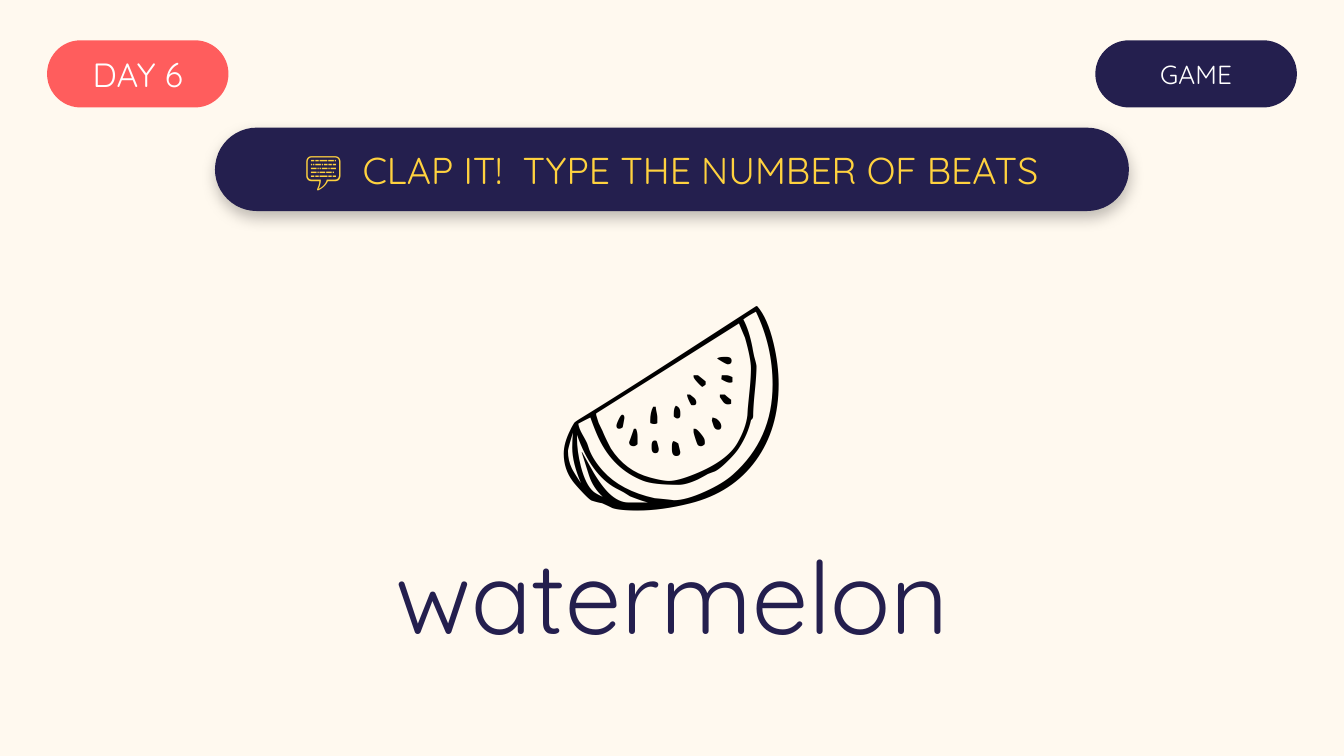
from lxml import etree
from pptx import Presentation
from pptx.dml.color import RGBColor
from pptx.enum.shapes import MSO_SHAPE
from pptx.enum.text import MSO_ANCHOR, MSO_AUTO_SIZE, PP_ALIGN
from pptx.oxml import parse_xml
from pptx.util import Pt

ROUNDED = MSO_SHAPE.ROUNDED_RECTANGLE
TOP, MIDDLE = MSO_ANCHOR.TOP, MSO_ANCHOR.MIDDLE
CENTER = PP_ALIGN.CENTER
NO_AUTOFIT = MSO_AUTO_SIZE.NONE

CREAM = RGBColor(0xFF, 0xF9, 0xEF)
CORAL = RGBColor(0xFF, 0x5D, 0x5D)
NAVY = RGBColor(0x24, 0x1F, 0x4E)
YELLOW = RGBColor(0xFF, 0xD2, 0x3F)
WHITE = RGBColor(0xFF, 0xFF, 0xFF)
BLACK = RGBColor(0x00, 0x00, 0x00)

SHADOW = (
    '<a:effectLst xmlns:a="http://schemas.openxmlformats.org/drawingml/2006/main">'
    '<a:outerShdw blurRad="101600" dist="38100" dir="5400000" rotWithShape="0">'
    '<a:srgbClr val="000000"><a:alpha val="25000"/></a:srgbClr>'
    '</a:outerShdw></a:effectLst>'
)


def write_centered(shape, text, size, color, font_name="Quicksand", anchor=MIDDLE):
    frame = shape.text_frame
    frame.word_wrap = True
    frame.auto_size = NO_AUTOFIT
    frame.vertical_anchor = anchor
    frame.text = text
    paragraph = frame.paragraphs[0]
    paragraph.alignment = CENTER
    paragraph.font.name = font_name
    paragraph.font.size = Pt(size)
    paragraph.font.color.rgb = color


presentation = Presentation()
presentation.slide_width = Pt(720)
presentation.slide_height = Pt(405)
slide = presentation.slides.add_slide(presentation.slide_layouts[5])
slide.background.fill.solid()
slide.background.fill.fore_color.rgb = CREAM

# Word to clap, as the slide title
title = slide.shapes.title
title.left, title.top, title.width, title.height = Pt(0), Pt(288), Pt(720), Pt(61.2)
write_centered(title, "watermelon", 54, NAVY)

# Day label, game label and instruction banner
pills = [
    ("DAY 6", 25.2, 21.6, 97.2, 36, CORAL, 18, WHITE),
    ("GAME", 586.8, 21.6, 108, 36, NAVY, 14, WHITE),
    ("💬  CLAP IT!  TYPE THE NUMBER OF BEATS", 115.2, 68.4, 489.6, 44.64, NAVY, 20, YELLOW),
]
for text, left, top, width, height, fill, size, color in pills:
    pill = slide.shapes.add_shape(ROUNDED, Pt(left), Pt(top), Pt(width), Pt(height))
    pill.adjustments[0] = 0.5
    pill.fill.solid()
    pill.fill.fore_color.rgb = fill
    pill.line.fill.background()
    pill.shadow.inherit = False
    frame = pill.text_frame
    frame.margin_left = frame.margin_right = frame.margin_top = frame.margin_bottom = 0
    write_centered(pill, text, size, color)

# Soft shadow under the banner, the last pill
properties = pill._element.spPr
for effects in properties.findall("{*}effectLst"):
    properties.replace(effects, parse_xml(SHADOW))

# Watermelon symbol
symbol = slide.shapes.add_textbox(Pt(0), Pt(122.4), Pt(720), Pt(144))
write_centered(symbol, "🍉", 130, BLACK, "Calibri", TOP)

presentation.save("out.pptx")
